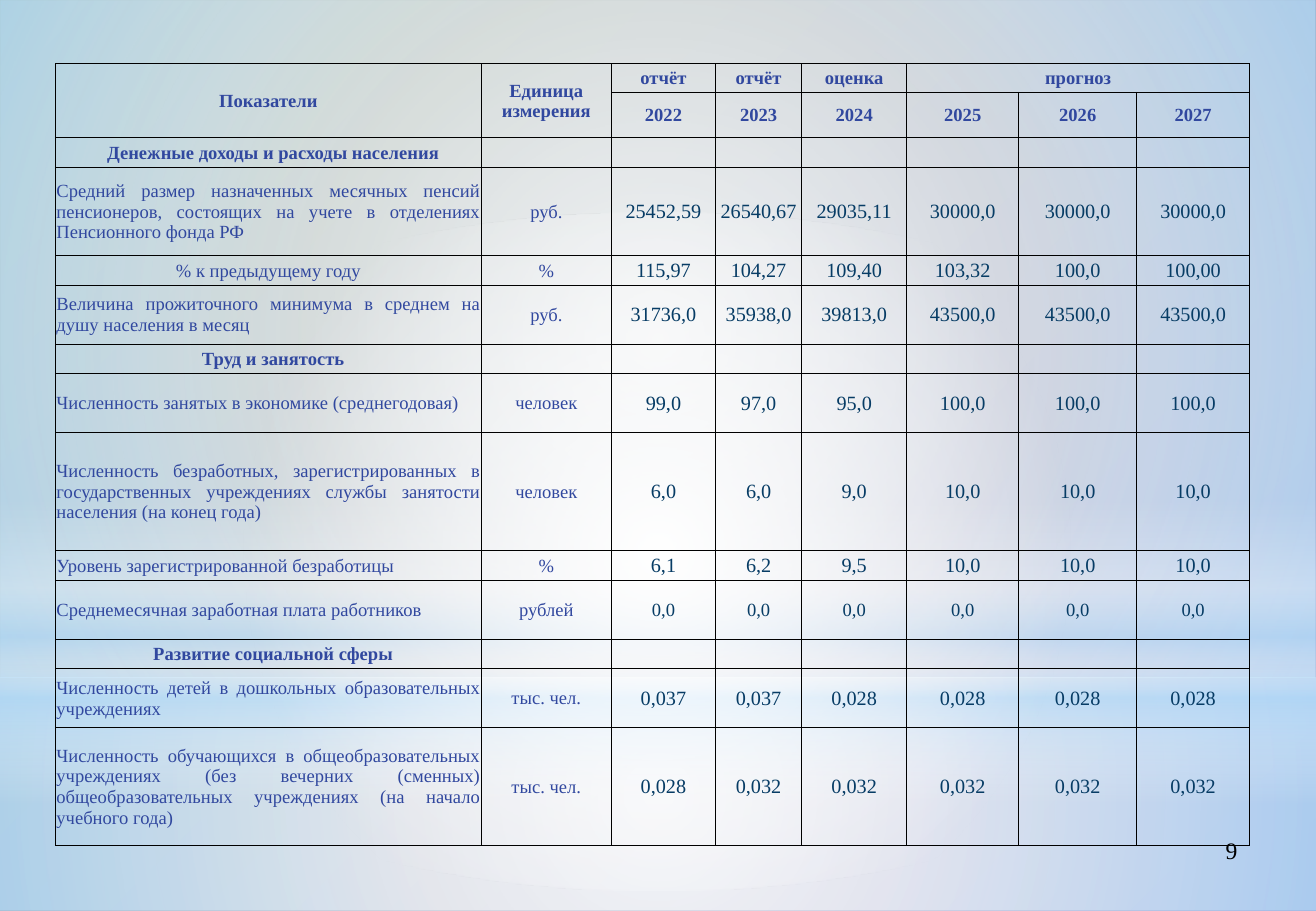
import pptx
import pptx.dml.color
import pptx.enum.shapes
import pptx.enum.text
import pptx.oxml
import pptx.oxml.ns
import pptx.util
from pptx.util import Cm, Pt

FONT = "Times New Roman"
LABEL_COLOR, VALUE_COLOR, BLACK = "31489F", "073C65", "000000"
ALIGN = pptx.enum.text.PP_ALIGN
SHAPES = pptx.enum.shapes.MSO_SHAPE

COLUMN_WIDTHS = [8.91, 2.72, 2.18, 1.8, 2.2, 2.34, 2.47, 2.36]
ROW_HEIGHTS = [0.6, 0.88, 0.62, 1.84, 0.62, 1.23, 0.62, 1.23, 2.47, 0.62,
               1.23, 0.62, 1.23, 2.47]
HEADER_ROWS = [
    ["Показатели", "Единица измерения", "отчёт", "отчёт", "оценка", "прогноз"],
    ["", "", "2022", "2023", "2024", "2025", "2026", "2027"],
]
INDICATOR_ROWS = [
    ["Денежные доходы и расходы населения"],
    ["Средний размер назначенных месячных пенсий пенсионеров, состоящих на учете "
     "в отделениях Пенсионного фонда РФ", "руб.",
     "25452,59", "26540,67", "29035,11", "30000,0", "30000,0", "30000,0"],
    ["% к предыдущему году", "%",
     "115,97", "104,27", "109,40", "103,32", "100,0", "100,00"],
    ["Величина прожиточного минимума в среднем на душу населения в месяц", "руб.",
     "31736,0", "35938,0", "39813,0", "43500,0", "43500,0", "43500,0"],
    ["Труд и занятость"],
    ["Численность занятых в экономике (среднегодовая)", "человек",
     "99,0", "97,0", "95,0", "100,0", "100,0", "100,0"],
    ["Численность безработных, зарегистрированных в государственных учреждениях "
     "службы занятости населения (на конец года)", "человек",
     "6,0", "6,0", "9,0", "10,0", "10,0", "10,0"],
    ["Уровень зарегистрированной безработицы", "%",
     "6,1", "6,2", "9,5", "10,0", "10,0", "10,0"],
    ["Среднемесячная заработная плата работников", "рублей",
     "0,0", "0,0", "0,0", "0,0", "0,0", "0,0"],
    ["Развитие социальной сферы"],
    ["Численность детей в дошкольных образовательных учреждениях", "тыс. чел.",
     "0,037", "0,037", "0,028", "0,028", "0,028", "0,028"],
    ["Численность обучающихся в общеобразовательных учреждениях (без вечерних "
     "(сменных) общеобразовательных учреждениях (на начало учебного года)",
     "тыс. чел.", "0,028", "0,032", "0,032", "0,032", "0,032", "0,032"],
]


def rgb(color):
    """Turn a hex string into a colour."""
    return pptx.dml.color.RGBColor.from_string(color)


def set_gradient(fill, owner, stops, angle=None):
    """Fill with (position, colour, opacity) stops, radial unless an angle is given."""
    fill.gradient()
    stop_xml = "".join(
        f'<a:gs pos="{position * 1000}"><a:srgbClr val="{color}">'
        f'<a:alpha val="{opacity * 1000}"/></a:srgbClr></a:gs>'
        for position, color, opacity in stops)
    if angle is None:
        direction = ('<a:path path="circle">'
                     '<a:fillToRect l="50000" t="50000" r="50000" b="50000"/></a:path>')
    else:
        direction = f'<a:lin ang="{angle * 60000}" scaled="0"/>'
    gradient = pptx.oxml.parse_xml(
        f'<a:gradFill {pptx.oxml.ns.nsdecls("a")} rotWithShape="1">'
        f'<a:gsLst>{stop_xml}</a:gsLst>{direction}</a:gradFill>')
    previous = owner.find(pptx.oxml.ns.qn("a:gradFill"))
    owner.replace(previous, gradient)


def add_glow(slide, preset, top, height, stops, angle=None):
    """Add a translucent full-width layer of the backdrop."""
    glow = slide.shapes.add_shape(preset, 0, Cm(top), Cm(27.53), Cm(height))
    glow.shadow.inherit = False
    glow.line.fill.background()
    set_gradient(glow.fill, glow._element.spPr, stops, angle)


def add_backdrop(slide):
    """Build the background gradient and its layers of light."""
    background = slide.background.fill
    set_gradient(background, slide._element.find(".//" + pptx.oxml.ns.qn("p:bgPr")),
                 [(0, "96AB94", 100), (100, "8488C4", 100)], 45)
    add_glow(slide, SHAPES.RECTANGLE, 14.17, 4.88,
             [(0, "FFFFFF", 91), (37, "FFFFFF", 76), (100, "B4DCFA", 79)])
    add_glow(slide, SHAPES.RECTANGLE, 0, 14.17,
             [(0, "FFFFFF", 89), (48, "FFFFFF", 62), (100, "B4DCFA", 79)])
    add_glow(slide, SHAPES.RECTANGLE, 10.46, 6.35,
             [(0, "FFFFFF", 0), (29, "FFFFFF", 30), (45, "B4DCFA", 40),
              (55, "FFFFFF", 26), (65, "B4DCFA", 60), (100, "FFFFFF", 0)], 90)
    add_glow(slide, SHAPES.OVAL, 4.45, 14.17,
             [(0, "FFFFFF", 100), (56, "FFFFFF", 0)])


def write_text(paragraph, text, size, color, align, bold=False):
    """Add one formatted run to a paragraph."""
    paragraph.alignment = align
    run = paragraph.add_run()
    run.text = text
    run.font.name = FONT
    run.font.size = Pt(size)
    run.font.bold = bold
    run.font.color.rgb = rgb(color)


def format_cell(cell):
    """Give a cell thin black borders, no fill, tight margins and a small empty line."""
    properties = cell._tc.get_or_add_tcPr()
    for side in ("lnL", "lnR", "lnT", "lnB"):
        properties.append(pptx.oxml.parse_xml(
            f'<a:{side} {pptx.oxml.ns.nsdecls("a")} w="6350"><a:solidFill>'
            f'<a:srgbClr val="{BLACK}"/></a:solidFill></a:{side}>'))
    cell.fill.background()
    cell.margin_left = cell.margin_right = cell.margin_top = Cm(0.02)
    cell.margin_bottom = 0
    cell.vertical_anchor = pptx.enum.text.MSO_ANCHOR.MIDDLE
    ending = cell.text_frame.paragraphs[0]._p.get_or_add_endParaRPr()
    ending.set("sz", "1100")


def write_indicator(table, row, texts):
    """Write a section heading or an indicator with its unit and yearly values."""
    is_section = len(texts) == 1
    for column, text in enumerate(texts):
        cell = table.cell(row, column)
        is_value = column >= 2
        centred = column > 0 or is_section or text.startswith("%")
        size = 12 if is_value and texts[1] != "рублей" else 11
        if is_section:
            cell.margin_left = Cm(0.22)
        write_text(cell.text_frame.paragraphs[0], text, size,
                   VALUE_COLOR if is_value else LABEL_COLOR,
                   ALIGN.CENTER if centred else ALIGN.JUSTIFY, is_section)


def add_indicator_table(slide):
    """Add the table of socio-economic indicators."""
    table = slide.shapes.add_table(
        len(ROW_HEIGHTS), len(COLUMN_WIDTHS), Cm(1.16), Cm(1.33),
        Cm(sum(COLUMN_WIDTHS)), Cm(sum(ROW_HEIGHTS))).table
    table.first_row = table.horz_banding = False
    for column, width in zip(table.columns, COLUMN_WIDTHS):
        column.width = Cm(width)
    for row, height in zip(table.rows, ROW_HEIGHTS):
        row.height = Cm(height)
    for cell in table.iter_cells():
        format_cell(cell)
    for first, last in (((0, 0), (1, 0)), ((0, 1), (1, 1)), ((0, 5), (0, 7))):
        table.cell(*first).merge(table.cell(*last))
    for row, texts in enumerate(HEADER_ROWS):
        for column, text in enumerate(texts):
            if text:
                write_text(table.cell(row, column).text_frame.paragraphs[0], text,
                           11, LABEL_COLOR, ALIGN.CENTER, True)
    for row, texts in enumerate(INDICATOR_ROWS, len(HEADER_ROWS)):
        write_indicator(table, row, texts)


def add_page_number(slide, number):
    """Add the page number at the lower right."""
    page_number = slide.shapes.add_textbox(Cm(19.71), Cm(17.35), Cm(6.43), Cm(1.32))
    page_number.text_frame.word_wrap = True
    write_text(page_number.text_frame.paragraphs[0], number, 14, BLACK, ALIGN.RIGHT)


def main():
    """Build the slide and save it."""
    presentation = pptx.Presentation()
    presentation.slide_width = Cm(27.53)
    presentation.slide_height = Cm(19.05)
    slide = presentation.slides.add_slide(presentation.slide_layouts[6])
    add_backdrop(slide)
    add_page_number(slide, "9")
    add_indicator_table(slide)
    presentation.save("out.pptx")


if __name__ == "__main__":
    main()
